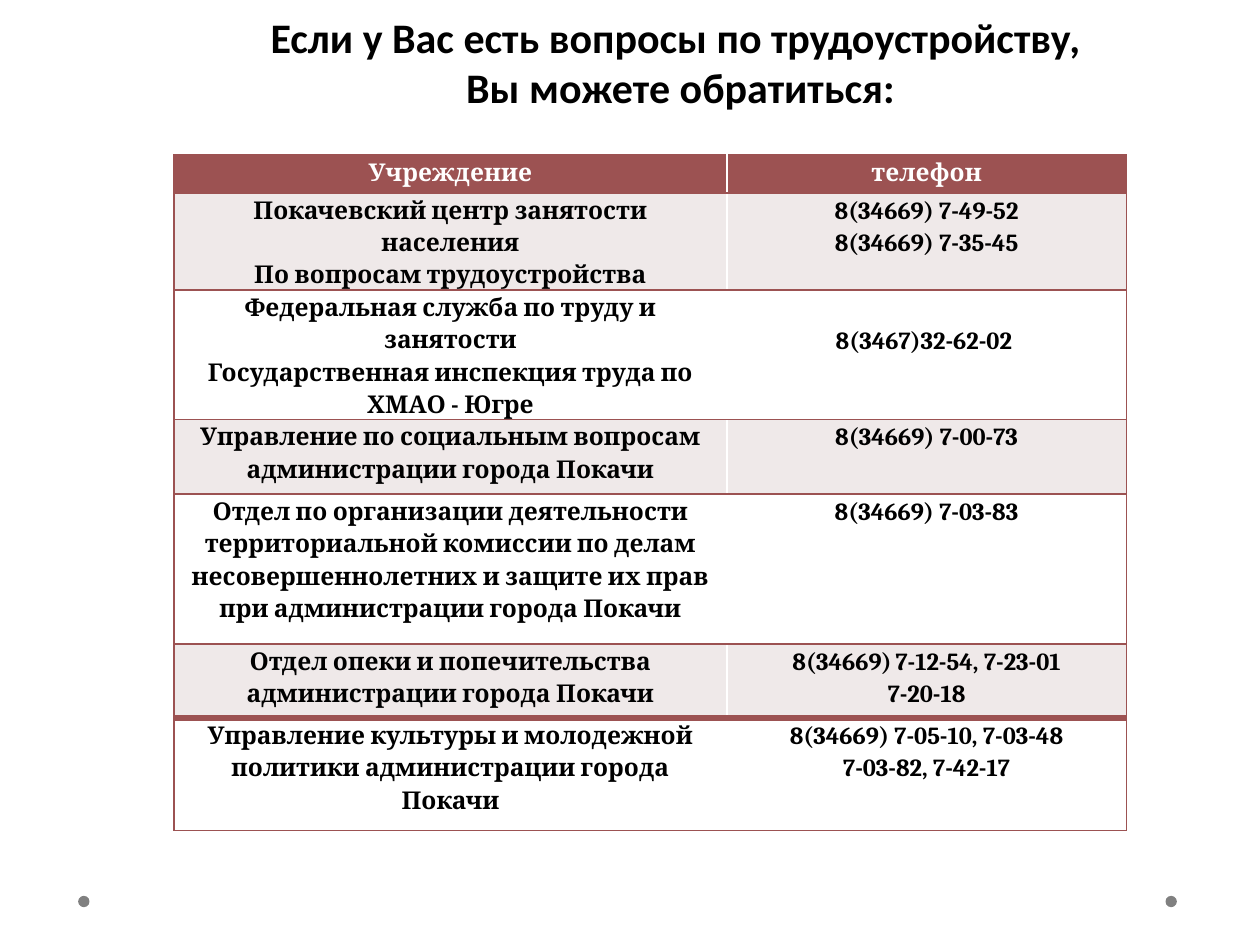
from pptx import Presentation
from pptx.dml.color import RGBColor
from pptx.enum.shapes import MSO_SHAPE as Shape
from pptx.enum.text import MSO_ANCHOR as Anchor, PP_ALIGN as Align
from pptx.oxml import parse_xml
from pptx.oxml.ns import nsdecls
from pptx.util import Inches, Pt

BLACK = RGBColor(0, 0, 0)
WHITE = RGBColor(255, 255, 255)
GREY = RGBColor(128, 128, 128)
MAROON = RGBColor(0x9C, 0x52, 0x52)
BLUSH = RGBColor(0xEF, 0xE9, 0xE9)

HEADER = [["Учреждение"], ["телефон"]]
CONTACTS = [
    [["Покачевский центр занятости населения", "По вопросам трудоустройства"],
     ["8(34669) 7-49-52", "8(34669) 7-35-45"]],
    [["Федеральная служба по труду и занятости",
      "Государственная инспекция труда по ХМАО - Югре"],
     ["8(3467)32-62-02 "]],
    [["Управление по социальным вопросам администрации города Покачи"],
     ["8(34669) 7-00-73"]],
    [["Отдел по организации деятельности территориальной комиссии по делам "
      "несовершеннолетних и защите их прав при администрации города Покачи"],
     ["8(34669) 7-03-83"]],
    [["Отдел опеки и попечительства администрации города Покачи"],
     [[("8(34669)", 14), (" ", 10), ("7-12-54, 7-23-01", 14)], "7-20-18"]],
    [["Управление культуры и молодежной политики администрации города Покачи"],
     ["8(34669) 7-05-10, 7-03-48", "7-03-82, 7-42-17"]],
]
COLUMN_WIDTHS = [43.9, 31.7]
ROW_HEIGHTS = [3, 5.9, 8.9, 5.9, 11.9, 5.9, 8.9]
LOWERED_ROW = 2


def write_text(frame, lines, *, font, size, color, spacing=1.0):
    for index, line in enumerate(lines):
        para = frame.paragraphs[0] if index == 0 else frame.add_paragraph()
        para.alignment = Align.CENTER
        para.line_spacing = spacing
        for text, points in [(line, size)] if isinstance(line, str) else line:
            span = para.add_run()
            span.text = text
            span.font.name = font
            span.font.size = Pt(points)
            span.font.bold = True
            span.font.color.rgb = color


def draw_borders(cell, **widths):
    properties = cell._tc.get_or_add_tcPr()
    for side in "LRTB":
        if side in widths:
            properties.append(parse_xml(
                f'<a:ln{side} {nsdecls("a")} w="{Pt(widths[side])}">'
                f'<a:solidFill><a:srgbClr val="{MAROON}"/></a:solidFill>'
                f'</a:ln{side}>'))


class SlideMaker:
    columns = 100
    rows = 75
    title_font = "Calibri"
    table_font = "Cambria"

    def __init__(self, deck):
        self.deck = deck
        self.page = deck.slides.add_slide(deck.slide_layouts[6])

    def across(self, count):
        return int(self.deck.slide_width * count / self.columns)

    def down(self, count):
        return int(self.deck.slide_height * count / self.rows)

    def area(self, left, top, width, height):
        return (self.across(left), self.down(top),
                self.across(width), self.down(height))

    def dot(self, left, top, size):
        dot = self.page.shapes.add_shape(
            Shape.OVAL, *self.area(left, top, size, size))
        dot.shadow.inherit = False
        dot.fill.solid()
        dot.fill.fore_color.rgb = GREY
        dot.line.fill.background()

    def title(self, lines, *place):
        box = self.page.shapes.add_textbox(*self.area(*place))
        box.text_frame.word_wrap = True
        box.text_frame.vertical_anchor = Anchor.TOP
        write_text(box.text_frame, lines, font=self.title_font,
                   size=24, color=BLACK)

    def table(self, content, left, top):
        place = self.area(left, top, sum(COLUMN_WIDTHS), sum(ROW_HEIGHTS))
        table = self.page.shapes.add_table(
            len(content), len(COLUMN_WIDTHS), *place).table
        for column, width in zip(table.columns, COLUMN_WIDTHS):
            column.width = self.across(width)
        for row, height in zip(table.rows, ROW_HEIGHTS):
            row.height = self.down(height)
        for row, entries in enumerate(content):
            for column, lines in enumerate(entries):
                self.cell(table.cell(row, column), lines, row, column)

    def cell(self, cell, lines, row, column):
        cell.margin_left = cell.margin_right = Inches(0.07)
        cell.margin_top = cell.margin_bottom = 0
        if row == LOWERED_ROW and column == 1:
            cell.margin_top = Inches(0.26)
        last = len(ROW_HEIGHTS) - 1
        outer = {"R": 1} if column else {"L": 1}
        draw_borders(cell, T=4 if row == last else 1,
                     B=4 if row == last - 1 else 1, **outer)
        cell.fill.solid()
        cell.fill.fore_color.rgb = (
            MAROON if row == 0 else BLUSH if row % 2 else WHITE)
        write_text(cell.text_frame, lines, font=self.table_font, size=14,
                   color=BLACK if row else WHITE, spacing=1.15)


def main():
    deck = Presentation()
    deck.slide_width = Inches(10)
    deck.slide_height = Inches(7.5)
    maker = SlideMaker(deck)
    for left in (92.5, 6.2):
        maker.dot(left, 71.1, 0.9)
    maker.table([HEADER] + CONTACTS, 13.8, 12.3)
    maker.title(["Если у Вас есть вопросы по трудоустройству, ",
                 "Вы можете обратиться:"], 12.9, 0.4, 82.2, 12.1)
    deck.save("out.pptx")


if __name__ == "__main__":
    main()
